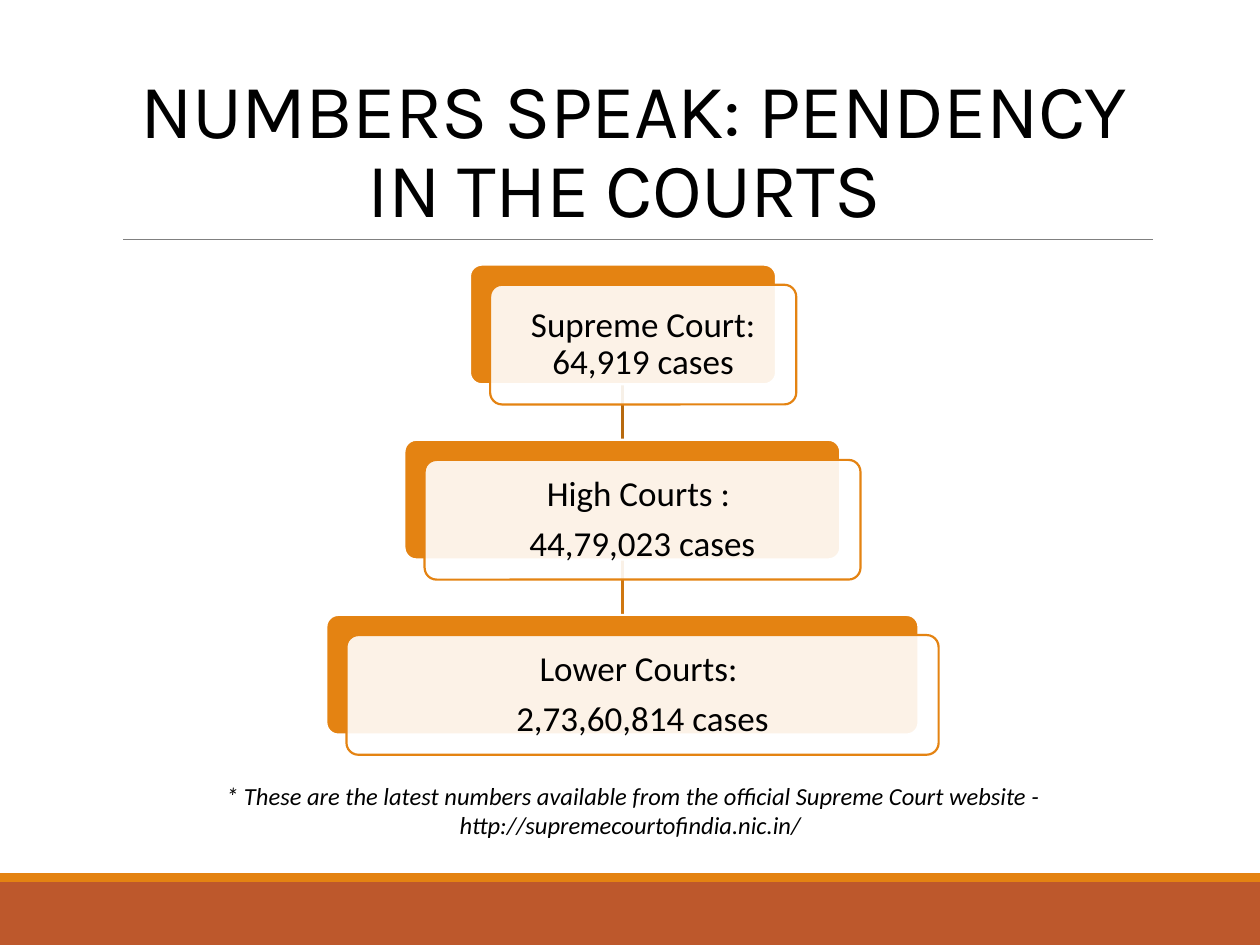
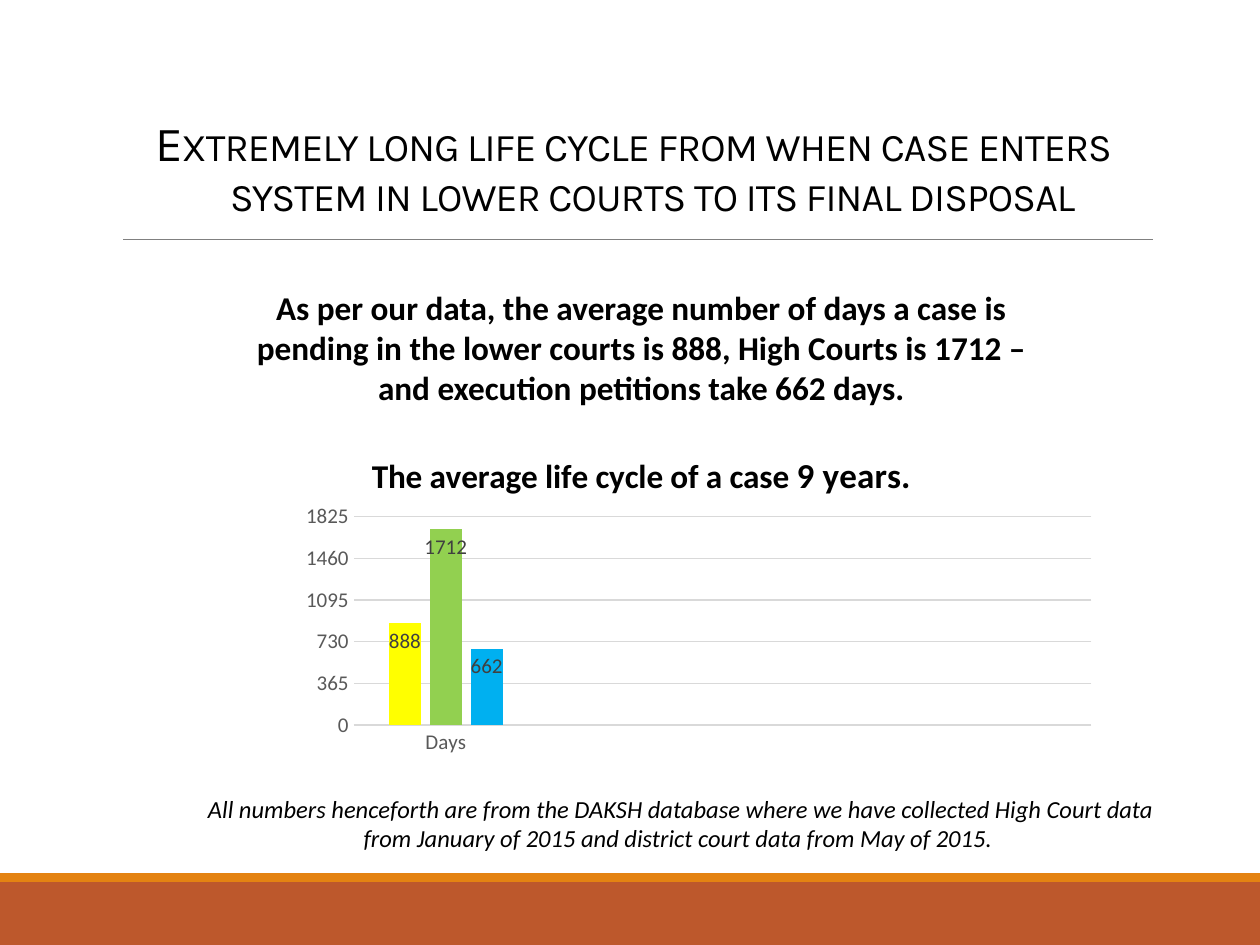
from dataclasses import dataclass

from lxml import etree
from pptx import Presentation
from pptx.chart.data import CategoryChartData
from pptx.dml.color import RGBColor
from pptx.enum.chart import XL_CHART_TYPE, XL_LABEL_POSITION, XL_TICK_MARK
from pptx.enum.shapes import MSO_CONNECTOR, MSO_SHAPE
from pptx.enum.text import MSO_ANCHOR, MSO_AUTO_SIZE, PP_ALIGN
from pptx.oxml.ns import qn
from pptx.util import Inches, Pt

# Shared look
BLACK = RGBColor(0x00, 0x00, 0x00)
WHITE = RGBColor(0xFF, 0xFF, 0xFF)
ORANGE = RGBColor(0xE4, 0x83, 0x12)
RUST = RGBColor(0xBD, 0x58, 0x2C)
GREY = RGBColor(0x80, 0x80, 0x80)
GRID_GREY = RGBColor(0xD9, 0xD9, 0xD9)
AXIS_GREY = RGBColor(0x59, 0x59, 0x59)
LABEL_GREY = RGBColor(0x40, 0x40, 0x40)
YELLOW = RGBColor(0xFF, 0xFF, 0x00)
GREEN = RGBColor(0x92, 0xD0, 0x50)
BLUE = RGBColor(0x00, 0xB0, 0xF0)
TITLE_FONT = "Karla"
BODY_FONT = "Calibri"


@dataclass
class Court:
    left: float
    width: float
    lines: list[str]
    link_color: RGBColor | None = None


@dataclass
class Duration:
    name: str
    days: int
    color: RGBColor


COURTS = [
    Court(3.73, 2.43, ["Supreme Court: 64,919 cases"], RGBColor(0xB7, 0x69, 0x0E)),
    Court(3.21, 3.46, ["High Courts : ", "44,79,023 cases"], RGBColor(0xCF, 0x77, 0x10)),
    Court(2.59, 4.70, ["Lower Courts: ", "2,73,60,814 cases"]),
]
COURT_TOP, COURT_STEP, COURT_HEIGHT = 2.1, 1.39, 0.95
PANEL_SHIFT = 0.16
LINK_X = 4.94

DURATIONS = [
    Duration("Series 1", 888, YELLOW),
    Duration("Series 2", 1712, GREEN),
    Duration("Series 3", 662, BLUE),
]


def set_font(font, size: float, color: RGBColor = BLACK, name: str = BODY_FONT) -> None:
    font.name = name
    font.size = Pt(size)
    font.color.rgb = color


def add_box(s, kind, left: float, top: float, width: float, height: float,
            fill: RGBColor, line: RGBColor | None = None):
    sp = s.shapes.add_shape(kind, Inches(left), Inches(top), Inches(width), Inches(height))
    sp.shadow.inherit = False
    sp.fill.solid()
    sp.fill.fore_color.rgb = fill
    if line is None:
        sp.line.fill.background()
    else:
        sp.line.color.rgb = line
        sp.line.width = Pt(1.25)
    return sp


def add_line(s, x1: float, y1: float, x2: float, y2: float,
             color: RGBColor, width: float) -> None:
    line = s.shapes.add_connector(MSO_CONNECTOR.STRAIGHT,
                                  Inches(x1), Inches(y1), Inches(x2), Inches(y2))
    line.line.color.rgb = color
    line.line.width = Pt(width)
    etree.SubElement(line._element.spPr, qn("a:effectLst"))


def add_text(s, left: float, top: float, width: float, height: float, text: str):
    tf = s.shapes.add_textbox(Inches(left), Inches(top), Inches(width), Inches(height)).text_frame
    tf.word_wrap = True
    tf.text = text
    p = tf.paragraphs[0]
    p.alignment = PP_ALIGN.CENTER
    return tf, p


def add_note(s, left: float, top: float, width: float, text: str) -> None:
    _, p = add_text(s, left, top, width, 0.57, text)
    set_font(p.font, 14)
    p.font.italic = True


def add_slide(prs, title: str, size: float, title_height: float, small_caps: bool = False):
    s = prs.slides.add_slide(prs.slide_layouts[5])

    # Footer bands and title rule
    add_box(s, MSO_SHAPE.RECTANGLE, 0, 7, 10, 0.5, RUST)
    add_box(s, MSO_SHAPE.RECTANGLE, 0, 6.93, 10, 0.07, ORANGE)
    add_line(s, 0.98, 1.9, 9.15, 1.9, GREY, 0.5)

    # Title
    sp = s.shapes.title
    sp.left, sp.top = Inches(0.9), Inches(0.31)
    sp.width, sp.height = Inches(8.25), Inches(title_height)
    tf = sp.text_frame
    tf.text = title
    tf.word_wrap = True
    tf.auto_size = MSO_AUTO_SIZE.NONE
    tf.vertical_anchor = MSO_ANCHOR.BOTTOM
    p = tf.paragraphs[0]
    p.alignment = PP_ALIGN.CENTER
    p.line_spacing = 0.85
    set_font(p.font, size, name=TITLE_FONT)
    rPr = p.runs[0]._r.get_or_add_rPr()
    rPr.set("spc", "-50")
    if small_caps:
        rPr.set("cap", "small")
    return s


def add_court(s, court: Court, top: float) -> None:
    back = add_box(s, MSO_SHAPE.ROUNDED_RECTANGLE, court.left, top,
                   court.width, COURT_HEIGHT, ORANGE, WHITE)
    panel = add_box(s, MSO_SHAPE.ROUNDED_RECTANGLE, court.left + PANEL_SHIFT,
                    top + PANEL_SHIFT, court.width, COURT_HEIGHT, WHITE, ORANGE)
    for sp in (back, panel):
        sp.adjustments[0] = 0.1
    color = panel._element.spPr.find(qn("a:solidFill"))[0]
    etree.SubElement(color, qn("a:alpha"), val="90000")

    tf = panel.text_frame
    tf.word_wrap = True
    tf.vertical_anchor = MSO_ANCHOR.MIDDLE
    tf.margin_left = tf.margin_right = tf.margin_top = tf.margin_bottom = Inches(0.11)
    tf.text = "\n".join(court.lines)
    for p in tf.paragraphs:
        p.alignment = PP_ALIGN.CENTER
        p.line_spacing = 0.9
        p.space_after = Pt(7)
        set_font(p.font, 20)


def set_plot_layout(chart, x: float, y: float, w: float, h: float) -> None:
    area = chart._chartSpace.chart.plotArea
    for old in area.findall(qn("c:layout")):
        area.remove(old)
    layout = etree.Element(qn("c:layout"))
    manual = etree.SubElement(layout, qn("c:manualLayout"))
    settings = [("layoutTarget", "inner"), ("xMode", "edge"), ("yMode", "edge"),
                ("x", x), ("y", y), ("w", w), ("h", h)]
    for tag, value in settings:
        etree.SubElement(manual, qn(f"c:{tag}"), val=str(value))
    area.insert(0, layout)


def add_duration_chart(s) -> None:
    data = CategoryChartData()
    data.categories = ["Days", "", "", ""]
    for d in DURATIONS:
        data.add_series(d.name, [d.days, None, None, None])
    chart = s.shapes.add_chart(XL_CHART_TYPE.COLUMN_CLUSTERED, Inches(1.04), Inches(3.45),
                               Inches(8.1), Inches(2.8), data).chart
    set_font(chart.font, 10)
    chart.has_legend = False
    set_plot_layout(chart, 0.218, 0.232, 0.723, 0.591)

    # Chart title
    chart.has_title = True
    chart.chart_title.include_in_layout = False
    p = chart.chart_title.text_frame.paragraphs[0]
    for text, size in [("The average life cycle of a case ", 19), ("9 years.", 20)]:
        r = p.add_run()
        r.text = text
        set_font(r.font, size)
        r.font.bold = True

    # Axes
    cat, val = chart.category_axis, chart.value_axis
    for axis in (cat, val):
        axis.major_tick_mark = axis.minor_tick_mark = XL_TICK_MARK.NONE
        set_font(axis.tick_labels.font, 12, AXIS_GREY)
    val.minimum_scale, val.maximum_scale, val.major_unit = 0, 1825, 365
    val.format.line.fill.background()
    for line in (cat.format.line, val.major_gridlines.format.line):
        line.color.rgb = GRID_GREY
        line.width = Pt(0.75)

    # Columns
    plot = chart.plots[0]
    plot.vary_by_categories = False
    plot.gap_width, plot.overlap = 219, -27
    for series, d in zip(plot.series, DURATIONS):
        series.format.fill.solid()
        series.format.fill.fore_color.rgb = d.color
        labels = series.data_labels
        labels.show_value = True
        labels.position = XL_LABEL_POSITION.INSIDE_END
        set_font(labels.font, 12, LABEL_GREY)


def build_pendency(prs) -> None:
    s = add_slide(prs, "NUMBERS SPEAK: PENDENCY IN THE COURTS ", 44, 1.59)
    tops = [COURT_TOP + i * COURT_STEP for i in range(len(COURTS))]
    for court, top in zip(COURTS, tops):
        if court.link_color:
            add_line(s, LINK_X, top + COURT_HEIGHT, LINK_X, top + COURT_STEP,
                     court.link_color, 1.25)
    for court, top in zip(COURTS, tops):
        add_court(s, court, top)
    add_note(s, 0.9, 6.15, 8.25,
             "* These are the latest numbers available from the official Supreme Court "
             "website - http://supremecourtofindia.nic.in/ ")


def build_life_cycle(prs) -> None:
    s = add_slide(prs, "Extremely long life cycle from when case enters system in lower "
                  "courts to its final disposal", 28, 1.5, small_caps=True)

    # Lead text above the chart
    tf, _ = add_text(s, 1.84, 2.28, 6.5, 1,
                     "As per our data, the average number of days a case is pending in the "
                     "lower courts is 888, High Courts is 1712 –\n"
                     "and execution petitions take 662 days.")
    tf.margin_left = tf.margin_right = tf.margin_top = tf.margin_bottom = 0
    for p in tf.paragraphs:
        p.alignment = PP_ALIGN.CENTER
        set_font(p.font, 19)
        p.font.bold = True

    add_duration_chart(s)
    add_note(s, 1.51, 6.25, 7.79,
             "All numbers henceforth are from the DAKSH database where we have collected High "
             "Court data from January of 2015 and district court data from May of 2015. ")


def main() -> None:
    prs = Presentation()
    prs.slide_width, prs.slide_height = Inches(10), Inches(7.5)
    build_pendency(prs)
    build_life_cycle(prs)
    prs.save("out.pptx")


if __name__ == "__main__":
    main()
